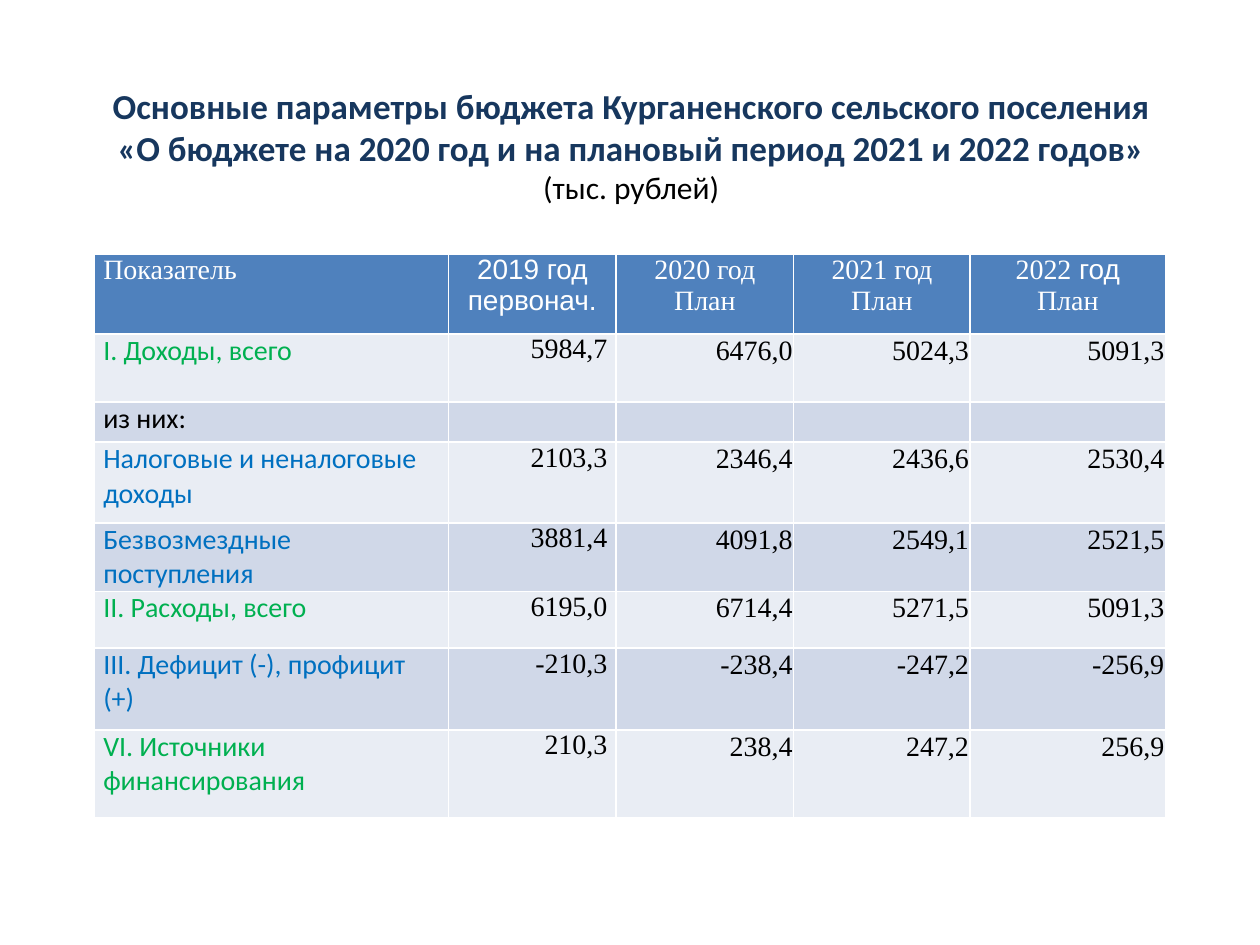
import copy
import pptx
import pptx.dml.color
import pptx.enum.text
import pptx.oxml
import pptx.oxml.ns
import pptx.util

Inches = pptx.util.Inches
Pt = pptx.util.Pt
Align = pptx.enum.text.PP_ALIGN
SERIF, SANS, BODY = "Times New Roman", "Arial", "Calibri"
WHITE, BLACK, NAVY = "FFFFFF", "000000", "17375E"
HEAD, LIGHT, DARK = "4F81BD", "E9EDF4", "D0D8E8"
GREEN, BLUE = "00B050", "0070C0"


def color(code):
    return pptx.dml.color.RGBColor.from_string(code)


class Page:
    def __init__(self, deck):
        self.slide = deck.slides.add_slide(deck.slide_layouts[5])
        self.size = 16
        self.edge = 1

    def run(self, para, text, face, ink, size=None, bold=False):
        run = para.add_run()
        run.text = text
        font = run.font
        font.name = face
        font.size = Pt(size or self.size)
        font.bold = bold
        font.color.rgb = color(ink)
        return run

    def title(self, box, lines):
        shape = self.slide.shapes.title
        shape.left, shape.top, shape.width, shape.height = map(Inches, box)
        frame = shape.text_frame
        frame.word_wrap = True
        frame.auto_size = pptx.enum.text.MSO_AUTO_SIZE.NONE
        frame.vertical_anchor = pptx.enum.text.MSO_ANCHOR.MIDDLE
        para = frame.paragraphs[0]
        para.alignment = Align.CENTER
        for spot, (text, ink, size, bold) in enumerate(lines):
            if spot:
                para.add_line_break()
                para._p[-1].append(copy.deepcopy(last._r.rPr))
            last = self.run(para, text, BODY, ink, size, bold)

    def table(self, box, cols, rows):
        count = len(rows), len(cols)
        grid = self.slide.shapes.add_table(*count, *map(Inches, box)).table
        for col, width in zip(grid.columns, cols):
            col.width = Inches(width)
        for row, height in zip(grid.rows, rows):
            row.height = Inches(height)
        return grid

    def border(self, cell):
        props = cell._tc.get_or_add_tcPr()
        space = pptx.oxml.ns.nsdecls("a")
        for side in "LRTB":
            props.append(pptx.oxml.parse_xml(
                f'<a:ln{side} {space} w="{Pt(self.edge)}"><a:solidFill>'
                f'<a:srgbClr val="{WHITE}"/></a:solidFill></a:ln{side}>'))

    def cell(self, cell, fill, paras, align, side=0.07, top=0):
        self.border(cell)
        cell.fill.solid()
        cell.fill.fore_color.rgb = color(fill)
        cell.margin_left = cell.margin_right = Inches(side)
        cell.margin_top, cell.margin_bottom = Inches(top), 0
        frame = cell.text_frame
        for spot, runs in enumerate(paras):
            para = frame.add_paragraph() if spot else frame.paragraphs[0]
            para.alignment = align
            for text, face, ink in runs:
                self.run(para, text, face, ink)


HEADS = [
    [[("Показатель", SERIF, WHITE)]],
    [[("2019 год первонач.", SANS, WHITE)]],
    [[("2020 год", SERIF, WHITE)], [("План", SERIF, WHITE)]],
    [[("2021 год", SERIF, WHITE)], [("План", SERIF, WHITE)]],
    [[("2022", SERIF, WHITE), (" год", SANS, WHITE)],
     [("План", SERIF, WHITE)]],
]
ROWS = [
    ("I. Доходы, всего", GREEN, ["5984,7", "6476,0", "5024,3", "5091,3"]),
    ("из них:", BLACK, [""] * 4),
    ("Налоговые и неналоговые доходы", BLUE,
     ["2103,3", "2346,4", "2436,6", "2530,4"]),
    ("Безвозмездные поступления", BLUE,
     ["3881,4", "4091,8", "2549,1", "2521,5"]),
    ("II. Расходы, всего", GREEN, ["6195,0", "6714,4", "5271,5", "5091,3"]),
    ("III. Дефицит (-), профицит (+)", BLUE,
     ["-210,3", "-238,4", "-247,2", "-256,9"]),
    ("VI. Источники финансирования", GREEN,
     ["210,3", "238,4", "247,2", "256,9"]),
]


def main():
    deck = pptx.Presentation()
    deck.slide_width, deck.slide_height = Inches(10), Inches(7.5)
    page = Page(deck)
    page.title((0.51, 0.44, 9, 1.42), [
        ("Основные параметры бюджета Курганенского сельского поселения",
         NAVY, 20, True),
        ("«О бюджете на 2020 год и на плановый период 2021 и 2022 годов»",
         NAVY, 20, True),
        ("(тыс. рублей)", BLACK, 18, False),
    ])
    grid = page.table((0.75, 2.02, 8.5, 4.47),
                      [2.81, 1.33, 1.41, 1.4, 1.55],
                      [0.63, 0.54, 0.32, 0.64, 0.54, 0.45, 0.65, 0.7])
    for col, paras in enumerate(HEADS):
        align = Align.CENTER if col else Align.LEFT
        page.cell(grid.cell(0, col), HEAD, paras, align)
    for row, (name, ink, nums) in enumerate(ROWS, 1):
        fill = LIGHT if row % 2 else DARK
        page.cell(grid.cell(row, 0), fill, [[(name, BODY, ink)]], Align.LEFT)
        for col, num in enumerate(nums, 1):
            side, top = (0.07, 0) if col == 1 else (0.01, 0.01)
            paras = [[(num, SERIF, BLACK)]] if num else []
            page.cell(grid.cell(row, col), fill, paras, Align.RIGHT, side, top)
    deck.save("out.pptx")


if __name__ == "__main__":
    main()
